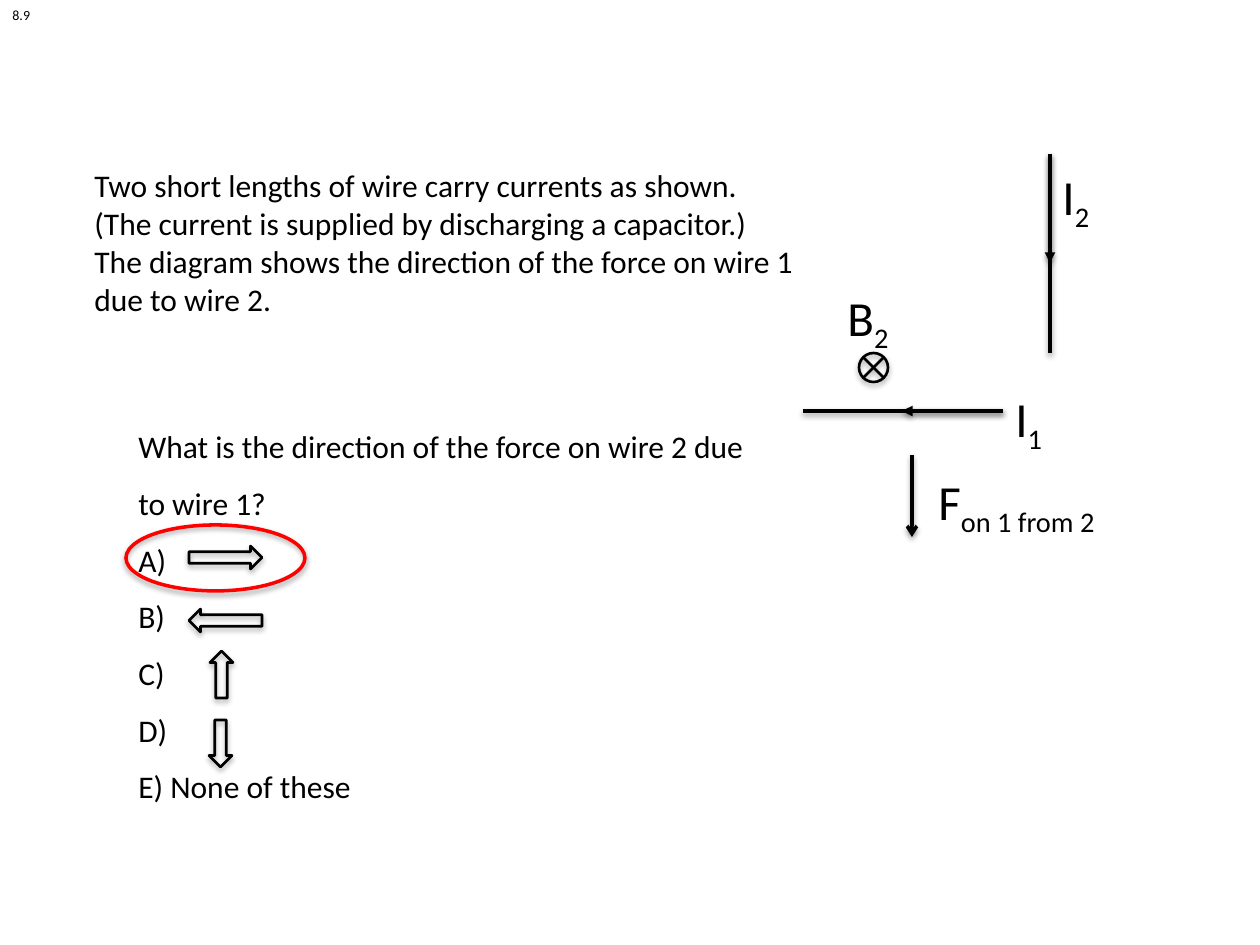
from lxml import etree
from pptx import Presentation
from pptx import util as u
from pptx.dml.color import RGBColor
from pptx.enum import shapes, text
from pptx.oxml import ns

BLACK = RGBColor(0x00, 0x00, 0x00)
RED = RGBColor(0xFF, 0x00, 0x00)
SCALE = 914400 / 126


def px(length):
    return u.Emu(round(length * SCALE))


class Sketch:
    font = "Calibri"
    body_size = 18
    label_size = 28
    wire_width = 2
    outline_width = 1.5

    def __init__(self, slide):
        self.slide = slide

    def add_shadow(self, item, distance, opacity):
        effects = etree.SubElement(item._element.spPr, ns.qn("a:effectLst"))
        shadow = etree.SubElement(
            effects, ns.qn("a:outerShdw"), blurRad="40000", dist=str(distance),
            dir="5400000", rotWithShape="0")
        color = etree.SubElement(shadow, ns.qn("a:srgbClr"), val=str(BLACK))
        etree.SubElement(color, ns.qn("a:alpha"), val=str(opacity * 1000))

    def add_line(self, start, end, head=None):
        line = self.slide.shapes.add_connector(
            shapes.MSO_CONNECTOR.STRAIGHT, *map(px, start + end))
        line.line.color.rgb = BLACK
        line.line.width = u.Pt(self.wire_width)
        if head:
            etree.SubElement(line.line._get_or_add_ln(), ns.qn("a:tailEnd"), type=head)
        self.add_shadow(line, 20000, 38)

    def add_outline(self, kind, place, color=BLACK, width=outline_width, rotation=0):
        shape = self.slide.shapes.add_shape(kind, *map(px, place))
        shape.rotation = rotation
        shape.fill.background()
        shape.line.color.rgb = color
        shape.line.width = u.Pt(width)
        self.add_shadow(shape, 23000, 35)

    def add_span(self, para, words, size, baseline=0):
        span = para.add_run()
        span.text = words
        span.font.name = self.font
        span.font.size = u.Pt(size)
        span.font.color.rgb = BLACK
        if baseline:
            span._r.get_or_add_rPr().set("baseline", str(baseline * 1000))

    def add_box(self, place, wrap):
        box = self.slide.shapes.add_textbox(*map(px, place))
        frame = box.text_frame
        frame.word_wrap = wrap
        frame.auto_size = text.MSO_AUTO_SIZE.SHAPE_TO_FIT_TEXT
        return frame

    def add_text(self, place, lines, size=body_size, spacing=None, wrap=True):
        frame = self.add_box(place, wrap)
        for index, words in enumerate(lines):
            para = frame.add_paragraph() if index else frame.paragraphs[0]
            if spacing:
                para.line_spacing = spacing
            self.add_span(para, words, size)

    def add_label(self, place, symbol, subscript):
        para = self.add_box(place, False).paragraphs[0]
        self.add_span(para, symbol, self.label_size)
        self.add_span(para, subscript, self.label_size, -25)


def main():
    deck = Presentation()
    deck.slide_width, deck.slide_height = px(1260), px(945)
    page = deck.slides.add_slide(deck.slide_layouts[6])
    sketch = Sketch(page)
    kinds = shapes.MSO_SHAPE

    wire_1_start, wire_2_start = (1003, 411), (1050, 154)
    sketch.add_line((803, 411), wire_1_start)
    sketch.add_line((1050, 353), wire_2_start)
    sketch.add_label((1003, 382, 58, 72), "I", "1")
    sketch.add_label((1050, 160, 58, 72), "I", "2")
    sketch.add_line(wire_2_start, (1050, 263), "triangle")
    sketch.add_line(wire_1_start, (902, 411), "triangle")

    sketch.add_outline(kinds.FLOWCHART_SUMMING_JUNCTION, (859, 353, 29, 29))
    sketch.add_label((835, 281, 77, 72), "B", "2")
    sketch.add_line((912, 455), (912, 537), "arrow")
    sketch.add_label((926, 465, 222, 72), "F", "on 1 from 2")

    sketch.add_text((82, 160, 777, 165), [
        "Two short lengths of wire carry currents as shown.",
        "(The current is supplied by discharging a capacitor.)",
        "The diagram shows the direction of the force on wire 1 due to wire 2.",
    ])
    sketch.add_text((126, 402, 640, 407), [
        "What is the direction of the force on wire 2 due to wire 1?",
        "A)", "B)", "C)", "D)", "E) None of these",
    ], spacing=1.5)

    for left, top, width, rotation in (
        (189, 546, 73, 0),
        (189, 609, 73, 180),
        (198, 663, 47, 270),
        (197, 732, 47, 90),
    ):
        sketch.add_outline(kinds.RIGHT_ARROW, (left, top, width, 23), rotation=rotation)
    sketch.add_outline(kinds.OVAL, (126, 525, 179, 66), RED, sketch.wire_width)
    sketch.add_text((0, 0, 43, 30), ["8.9"], size=8, wrap=False)

    deck.save("out.pptx")


if __name__ == "__main__":
    main()
